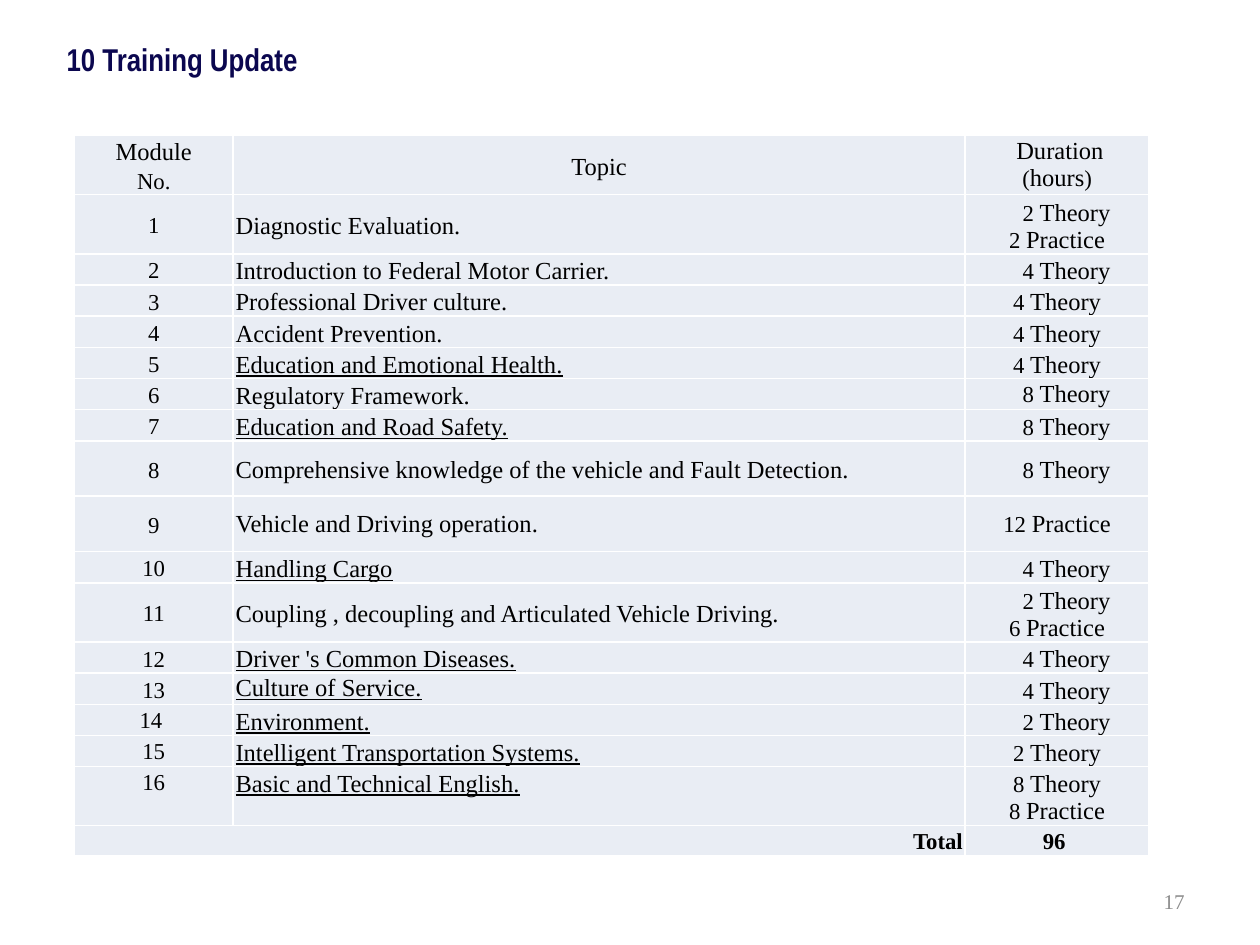
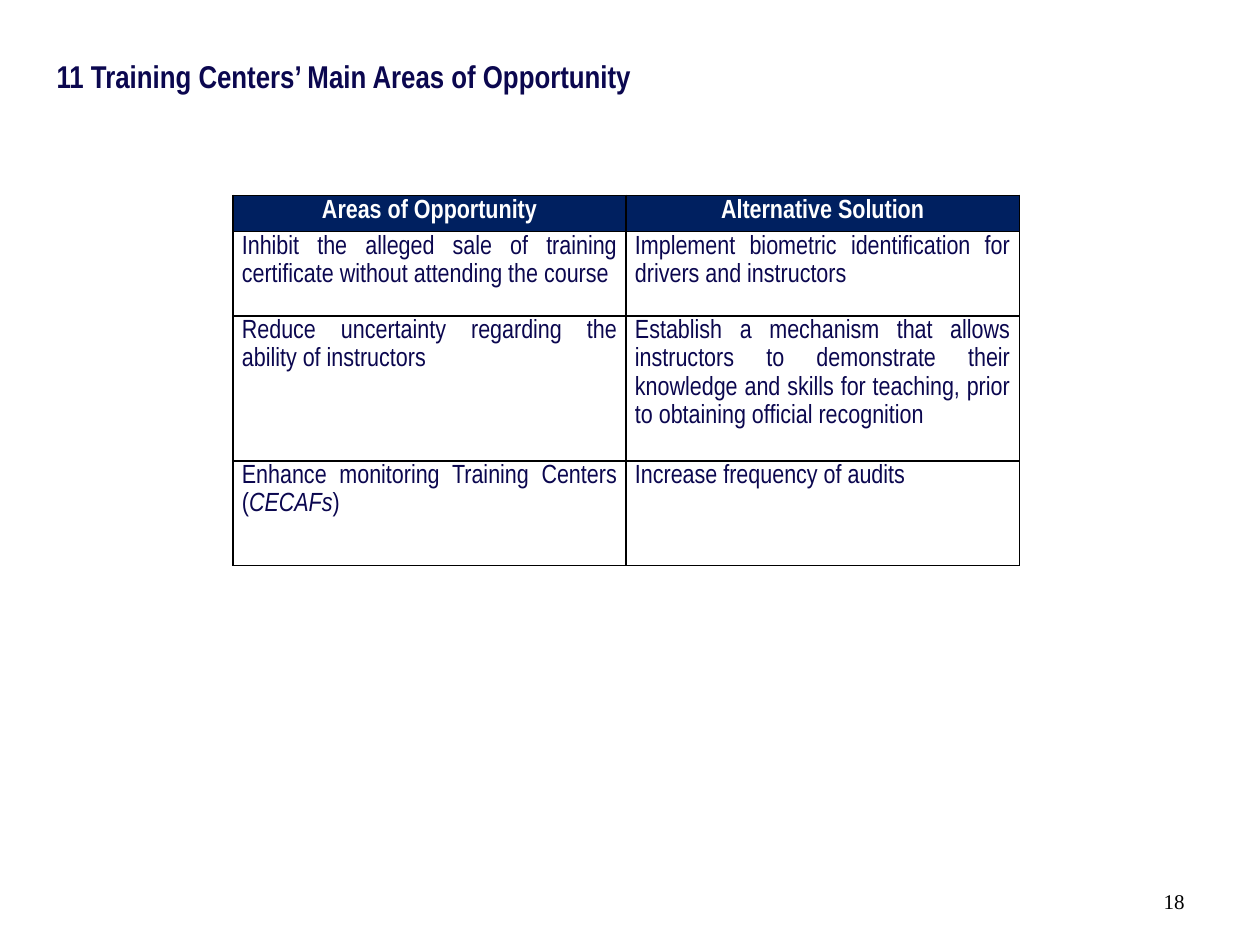
from collections import namedtuple

from lxml import etree
from pptx import Presentation
from pptx.dml.color import RGBColor
from pptx.enum.text import MSO_ANCHOR, PP_ALIGN
from pptx.oxml.ns import qn
from pptx.util import Inches, Pt

LEFT, CENTER, RIGHT, JUSTIFY = (
    PP_ALIGN.LEFT, PP_ALIGN.CENTER, PP_ALIGN.RIGHT, PP_ALIGN.JUSTIFY)
TOP, MIDDLE = MSO_ANCHOR.TOP, MSO_ANCHOR.MIDDLE

COLORS = {
    "navy": "0B074F",
    "header": "002060",
    "cell": "E9EDF4",
    "black": "000000",
    "white": "FFFFFF",
    "gray": "8C8C8C",
}
SANS, SERIF = "Arial Narrow", "Times New Roman"
LOOSE = 1.15

Style = namedtuple("Style", "font size color bold italic underline",
                   defaults=(False, False, False))
TITLE = Style(SANS, 18, "navy", bold=True)
SMALL = Style(SERIF, 13, "black")
NORMAL = Style(SERIF, 14, "black")
UNDERLINED = NORMAL._replace(underline=True)
TOTAL = SMALL._replace(bold=True)
AREA_HEADER = Style(SANS, 15, "white", bold=True)
AREA = Style(SANS, 15, "navy")
AREA_ITALIC = AREA._replace(italic=True)

Line = namedtuple("Line", "runs align spacing indent", defaults=(LEFT, LOOSE, 0))
Module = namedtuple("Module", "topic hours style height indent topic_spacing hours_spacing",
                    defaults=(NORMAL, 0.24, 0.15, LOOSE, LOOSE))

MODULES = [
    Module("Diagnostic Evaluation.", ["2 Theory", "2 Practice"], height=0.47),
    Module("Introduction to Federal Motor Carrier.", ["4 Theory"]),
    Module("Professional Driver culture.", ["4 Theory"], indent=0),
    Module("Accident Prevention.", ["4 Theory"], indent=0),
    Module("Education and Emotional Health.", ["4 Theory"], UNDERLINED, indent=0),
    Module("Regulatory Framework.", ["8 Theory"], hours_spacing=1),
    Module("Education and Road Safety.", ["8 Theory"], UNDERLINED),
    Module("Comprehensive knowledge of the vehicle and Fault Detection.",
           ["8 Theory"], height=0.44),
    Module("Vehicle and Driving operation.", ["12 Practice"], height=0.44,
           topic_spacing=1),
    Module("Handling Cargo", ["4 Theory"], UNDERLINED),
    Module("Coupling , decoupling and Articulated Vehicle Driving.",
           ["2 Theory", "6 Practice"], height=0.47),
    Module("Driver 's Common Diseases.", ["4 Theory"], UNDERLINED),
    Module("Culture of Service.", ["4 Theory"], UNDERLINED, topic_spacing=1),
    Module("Environment.", ["2 Theory"], UNDERLINED),
    Module("Intelligent Transportation Systems.", ["2 Theory"], UNDERLINED, indent=0),
    Module("Basic and Technical English.", ["8 Theory", "8 Practice"], UNDERLINED,
           height=0.47, indent=0),
]
FIRST_TOP_ANCHORED = 14

AREAS = [
    ([("Inhibit the alleged sale of training certificate without attending the course", AREA)],
     "Implement biometric identification for drivers and instructors"),
    ([("Reduce uncertainty regarding the ability of instructors", AREA)],
     "Establish a mechanism that allows instructors to demonstrate their knowledge "
     "and skills for teaching, prior to obtaining official recognition"),
    ([("Enhance monitoring Training Centers (", AREA), ("CECAFs", AREA_ITALIC), (")", AREA)],
     "Increase frequency of audits"),
]


def write_lines(text_frame, lines):
    for index, line in enumerate(lines):
        paragraph = text_frame.add_paragraph() if index else text_frame.paragraphs[0]
        paragraph.alignment = line.align
        paragraph.line_spacing = line.spacing
        if line.indent:
            paragraph._p.get_or_add_pPr().set("indent", str(Inches(line.indent)))
        for text, style in line.runs:
            run = paragraph.add_run()
            run.text = text
            font = run.font
            font.name, font.size = style.font, Pt(style.size)
            font.bold, font.italic, font.underline = style.bold, style.italic, style.underline
            font.color.rgb = RGBColor.from_string(COLORS[style.color])


def add_text(slide, box, text, style, align=LEFT, anchor=MIDDLE, wrap=True):
    shape = slide.shapes.add_textbox(*map(Inches, box))
    shape.text_frame.word_wrap = wrap
    shape.text_frame.vertical_anchor = anchor
    write_lines(shape.text_frame, [Line([(text, style)], align, 1)])


def add_page_number(slide, number, color):
    add_text(slide, (7.17, 6.95, 2.33, 0.4), str(number), Style(SERIF, 12, color), RIGHT)


def add_plain_table(slide, left, top, widths, heights):
    frame = slide.shapes.add_table(
        len(heights), len(widths), Inches(left), Inches(top),
        Inches(sum(widths)), Inches(sum(heights)))
    table = frame.table
    table.first_row = table.horz_banding = False
    for column, width in zip(table.columns, widths):
        column.width = Inches(width)
    for row, height in zip(table.rows, heights):
        row.height = Inches(height)
    return table


def set_borders(cell, color):
    properties = cell._tc.get_or_add_tcPr()
    for side in ("a:lnL", "a:lnR", "a:lnT", "a:lnB"):
        border = etree.SubElement(properties, qn(side), w=str(Pt(1)))
        fill = etree.SubElement(border, qn("a:solidFill"))
        etree.SubElement(fill, qn("a:srgbClr"), val=COLORS[color])


def fill_cell(cell, lines, border, margin, fill=None, anchor=TOP):
    set_borders(cell, border)
    if fill:
        cell.fill.solid()
        cell.fill.fore_color.rgb = RGBColor.from_string(COLORS[fill])
    else:
        cell.fill.background()
    cell.margin_left = cell.margin_right = Inches(margin)
    cell.margin_top = cell.margin_bottom = 0
    cell.vertical_anchor = anchor
    write_lines(cell.text_frame, lines)


def hours_lines(module):
    """Only the first line is indented; practice hours are single spaced."""
    lines = []
    for index, entry in enumerate(module.hours):
        hours, kind = entry.split()
        theory = kind == "Theory"
        lines.append(Line([(hours + " ", SMALL), (kind, NORMAL)], CENTER,
                          module.hours_spacing if theory else 1,
                          module.indent if theory and not index else 0))
    return lines


def module_rows():
    yield MIDDLE, [
        [Line([("Module", NORMAL)], CENTER), Line([("No.", SMALL)], CENTER)],
        [Line([("Topic", NORMAL)], CENTER)],
        [Line([(" ", SMALL), ("Duration", NORMAL)], CENTER, 1),
         Line([("(", SMALL), ("hours", NORMAL), (")", SMALL)], CENTER, 1)],
    ]
    for number, module in enumerate(MODULES, 1):
        label = "14 " if number == 14 else str(number)
        yield MIDDLE if number < FIRST_TOP_ANCHORED else TOP, [
            [Line([(label, SMALL)], CENTER)],
            [Line([(module.topic, module.style)], LEFT, module.topic_spacing)],
            hours_lines(module),
        ]
    yield TOP, [
        [Line([("Total", TOTAL)], RIGHT)],
        [],
        [Line([("96 ", TOTAL)], CENTER)],
    ]


def add_training_slide(presentation):
    slide = presentation.slides.add_slide(presentation.slide_layouts[6])
    heights = [0.47] + [module.height for module in MODULES] + [0.24]
    table = add_plain_table(slide, 0.59, 1.07, [1.26, 5.81, 1.46], heights)
    for row, (anchor, cells) in enumerate(module_rows()):
        for column, lines in enumerate(cells):
            fill_cell(table.cell(row, column), lines, "white", 0.02, "cell", anchor)
    last = len(heights) - 1
    table.cell(last, 0).merge(table.cell(last, 1))
    add_page_number(slide, 17, "gray")
    add_text(slide, (0.43, 0.27, 2.05, 0.4), "10 Training Update", TITLE,
             anchor=TOP, wrap=False)


def add_opportunity_slide(presentation):
    slide = presentation.slides.add_slide(presentation.slide_layouts[6])
    add_page_number(slide, 18, "black")
    table = add_plain_table(slide, 1.85, 1.55, [3.12, 3.12], [0.26, 0.67, 1.12, 0.83])
    for column, text in enumerate(["Areas of Opportunity", "Alternative Solution"]):
        fill_cell(table.cell(0, column), [Line([(text, AREA_HEADER)], CENTER)],
                  "black", 0.07, "header")
    for row, (area, solution) in enumerate(AREAS, 1):
        for column, runs in enumerate([area, [(solution, AREA)]]):
            fill_cell(table.cell(row, column), [Line(runs, JUSTIFY)], "black", 0.07)
    add_text(slide, (0.35, 0.29, 5.28, 0.63),
             "11 Training Centers’ Main Areas of Opportunity", TITLE)


def main():
    presentation = Presentation()
    presentation.slide_width, presentation.slide_height = Inches(10), Inches(7.5)
    add_training_slide(presentation)
    add_opportunity_slide(presentation)
    presentation.save("out.pptx")


if __name__ == "__main__":
    main()
